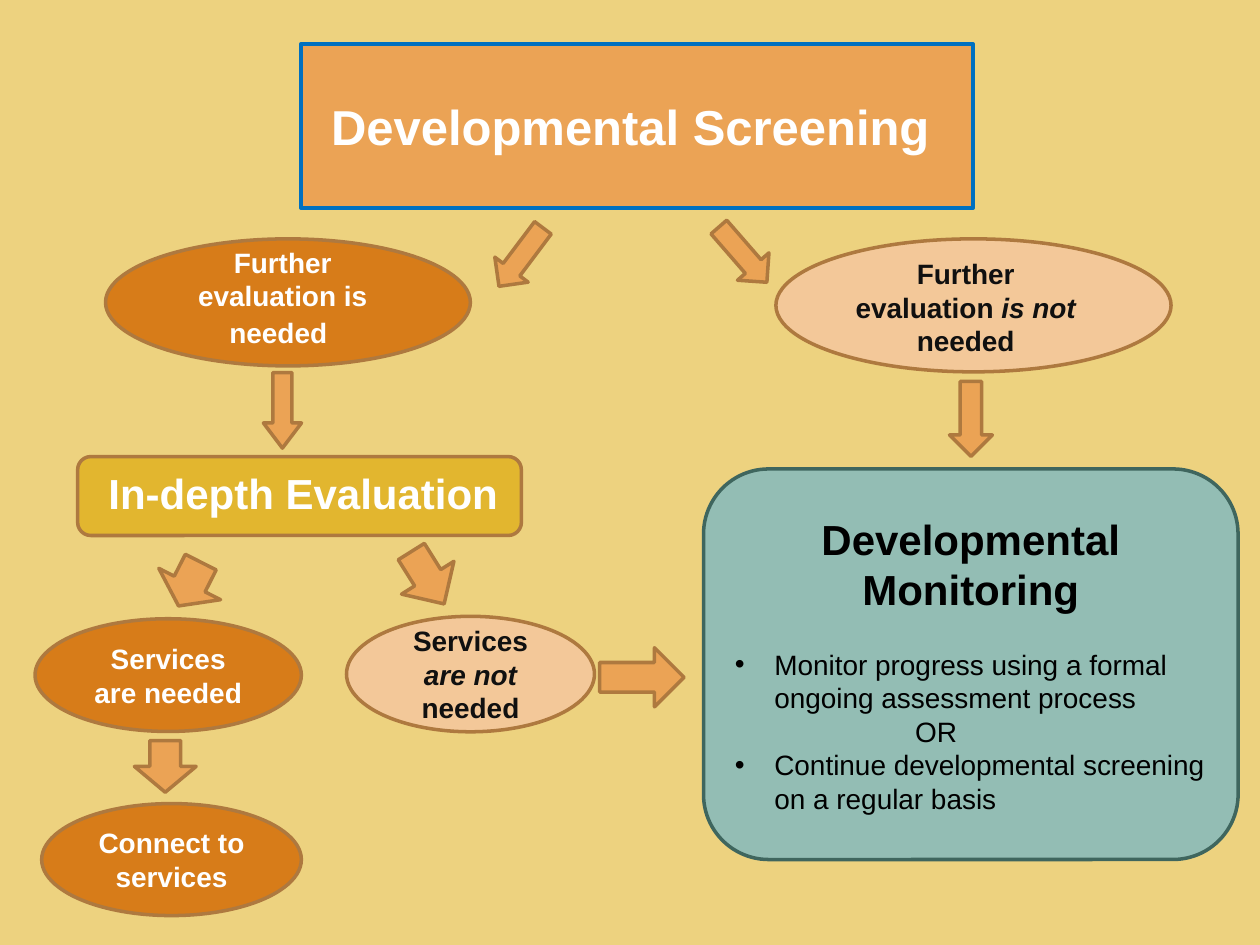
from lxml import etree
from pptx import Presentation
from pptx import util as u
from pptx.dml.color import RGBColor
from pptx.enum import shapes, text
from pptx.oxml.ns import qn

SAND = RGBColor(0xED, 0xD2, 0x7F)
APRICOT = RGBColor(0xEB, 0xA3, 0x55)
ORANGE = RGBColor(0xD7, 0x7C, 0x19)
PEACH = RGBColor(0xF3, 0xC8, 0x99)
GOLD = RGBColor(0xE2, 0xB6, 0x2F)
TEAL = RGBColor(0x93, 0xBD, 0xB4)
DARK_TEAL = RGBColor(0x3F, 0x66, 0x5E)
BROWN = RGBColor(0xAE, 0x79, 0x3F)
BLUE = RGBColor(0x00, 0x70, 0xC0)
WHITE = RGBColor(0xFF, 0xFF, 0xFF)
INK = RGBColor(0x10, 0x10, 0x10)
BLACK = RGBColor(0, 0, 0)

BOLD = {"size": u.Pt(16), "bold": True}
ITALIC = {**BOLD, "italic": True}
PLAIN = {"size": u.Pt(16), "bold": False}
HEADING = {"size": u.Pt(24), "bold": True}
TITLE = {"size": u.Pt(28), "bold": True}
CENTER = {"alignment": text.PP_ALIGN.CENTER}
LEFT = {"alignment": text.PP_ALIGN.LEFT}
KIND = shapes.MSO_SHAPE


class FlowSlide:
    def __init__(self, prs, font="Arial", line_width=2):
        self.font, self.line_width = font, u.Pt(line_width)
        self.slide = prs.slides.add_slide(prs.slide_layouts[5])
        fill = self.slide.background.fill
        fill.solid()
        fill.fore_color.rgb = SAND

    def paint(self, sp, fill, line):
        sp.fill.solid()
        sp.fill.fore_color.rgb = fill
        sp.line.color.rgb = line
        sp.line.width = self.line_width

    def paragraph(self, p, runs, color, form=CENTER, indent=0, hanging=0):
        """Fill p with (text, font format) runs; a hanging indent gets a bullet."""
        if indent:
            pPr = p._p.get_or_add_pPr()
            pPr.set("marL", str(u.Pt(indent)))
            pPr.set("indent", str(-u.Pt(hanging)))
            if hanging:
                etree.SubElement(pPr, qn("a:buFont"), typeface="Arial")
                etree.SubElement(pPr, qn("a:buChar"), char="•")
        for name, value in form.items():
            setattr(p, name, value)
        for words, style in runs:
            r = p.add_run()
            r.text = words
            for name, value in {"name": self.font, **style}.items():
                setattr(r.font, name, value)
            r.font.color.rgb = color

    def title(self, box, words):
        sp = self.slide.shapes.title
        sp.left, sp.top, sp.width, sp.height = map(u.Pt, box)
        geom = etree.SubElement(sp._element.spPr, qn("a:prstGeom"), prst="roundRect")
        etree.SubElement(geom, qn("a:avLst"))
        self.paint(sp, APRICOT, BLUE)
        tf = sp.text_frame
        tf.word_wrap = True
        tf.auto_size = text.MSO_AUTO_SIZE.NONE
        tf.vertical_anchor = text.MSO_ANCHOR.MIDDLE
        self.paragraph(tf.paragraphs[0], [(words, TITLE)], WHITE)

    def shape(self, kind, box, fill, line=BROWN):
        sp = self.slide.shapes.add_shape(kind, *map(u.Pt, box))
        sp.shadow.inherit = False
        self.paint(sp, fill, line)
        return sp

    def node(self, kind, box, fill, runs, color, line=BROWN, **layout):
        """Add a shape with its first paragraph and return its text frame."""
        tf = self.shape(kind, box, fill, line).text_frame
        tf.word_wrap = True
        tf.vertical_anchor = text.MSO_ANCHOR.MIDDLE
        self.paragraph(tf.paragraphs[0], runs, color, **layout)
        return tf

    def label(self, box, runs, color):
        tf = self.slide.shapes.add_textbox(*map(u.Pt, box)).text_frame
        tf.word_wrap = True
        self.paragraph(tf.paragraphs[0], runs, color)

    def arrow(self, box, rotation=0, head=0.5):
        sp = self.shape(KIND.DOWN_ARROW, box, APRICOT)
        sp.adjustments[1] = head
        sp.rotation = rotation


def main():
    prs = Presentation()
    prs.slide_width, prs.slide_height = u.Pt(720), u.Pt(540)
    s = FlowSlide(prs)
    s.title((172, 25, 384, 94), "Developmental Screening ")

    s.shape(KIND.OVAL, (60.3, 136.5, 208.5, 72.6), ORANGE)
    s.label((88.5, 136.5, 146, 48),
            [("Further evaluation is needed", BOLD),
             (" ", {"size": u.Pt(18), "bold": False})], WHITE)
    s.shape(KIND.OVAL, (443.4, 136.5, 225.8, 76), PEACH)
    s.label((476.6, 143.2, 150.5, 60.5),
            [("Further evaluation ", BOLD), ("is not ", ITALIC), ("needed", BOLD)], INK)

    s.node(KIND.ROUNDED_RECTANGLE, (44.4, 260.9, 253.6, 45.1), GOLD,
           [("In-depth Evaluation", HEADING)], WHITE,
           form={**CENTER, "line_spacing": 0.9}, indent=4.3)

    for box, words in (((20, 353.6, 152.2, 64.4), "Services are needed"),
                       ((23.8, 459.2, 148.4, 64), "Connect to services")):
        s.node(KIND.OVAL, box, ORANGE, [(words, BOLD)], WHITE)
    s.node(KIND.OVAL, (198, 352.2, 141.7, 66), PEACH,
           [("Services", BOLD), (" are not ", ITALIC), ("needed", BOLD)], INK)

    tf = s.node(KIND.ROUNDED_RECTANGLE, (402, 268, 305.5, 223.2), TEAL,
                [("Developmental Monitoring", HEADING)], BLACK, DARK_TEAL)
    for words, form, indent, hanging in (
            ("Monitor progress using a formal ongoing assessment process",
             {**LEFT, "space_before": u.Pt(19)}, 22.5, 22.5),
            ("OR", LEFT, 103, 0),
            ("Continue developmental screening on a regular basis", LEFT, 22.5, 22.5)):
        s.paragraph(tf.add_paragraph(), [(words, PLAIN)], BLACK, form, indent, hanging)

    for box, rotation, head in (
            ((150.5, 212.9, 21.8, 43.2), 0, 0.66),
            ((285.8, 126, 23.8, 41.8), 36.9, 0.5),
            ((412.6, 124.6, 23.8, 41.8), 319, 0.5),
            ((542.6, 218, 24.5, 42.8), 0, 0.5),
            ((88.6, 319.7, 39.6, 28.1), 26.9, 0.5),
            ((226.8, 312.5, 35.3, 35.3), 327.9, 0.5),
            ((349.9, 362.9, 33.8, 48.2), 270, 0.5),
            ((76.8, 423.2, 35.3, 29.5), 0, 0.5)):
        s.arrow(box, rotation, head)

    prs.save("out.pptx")


if __name__ == "__main__":
    main()
